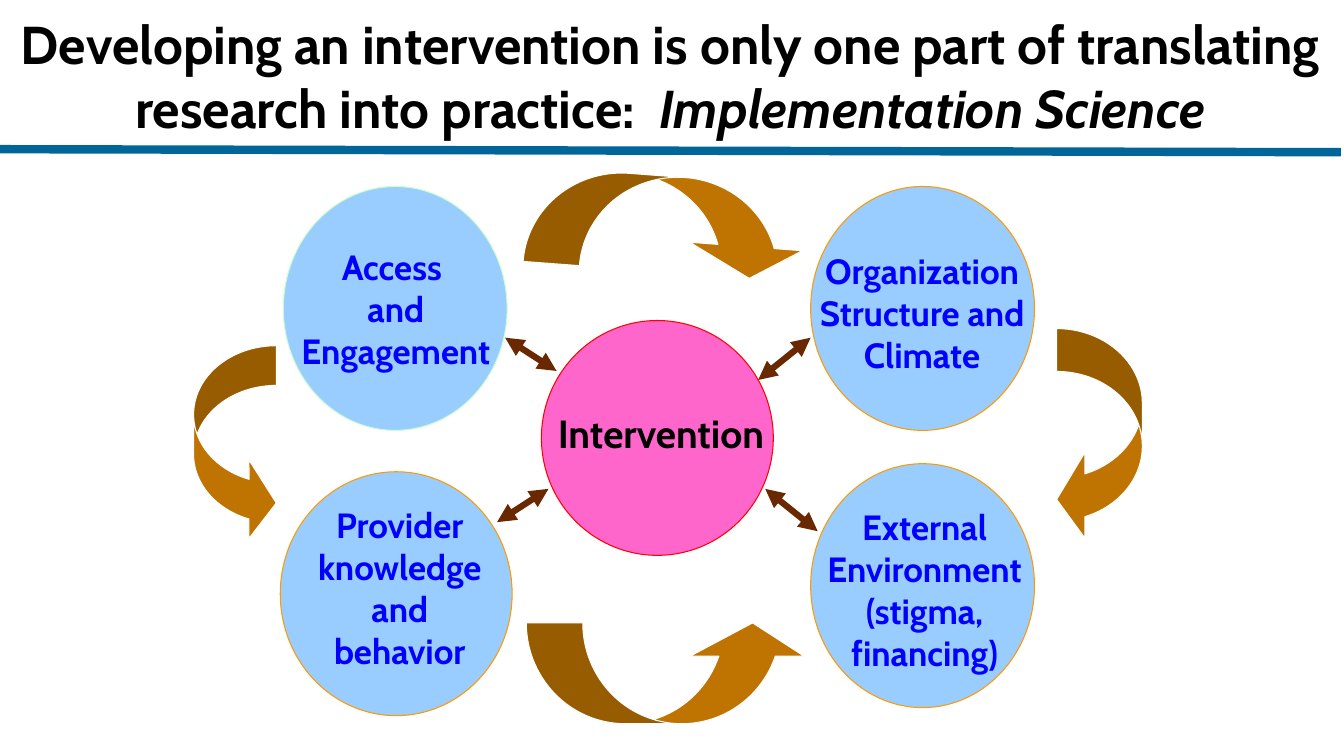
from lxml import etree
from pptx import Presentation
from pptx.dml.color import RGBColor
from pptx.enum.shapes import MSO_CONNECTOR, MSO_SHAPE
from pptx.enum.text import MSO_ANCHOR, PP_ALIGN
from pptx.oxml.ns import qn
from pptx.util import Inches, Pt

OVAL = MSO_SHAPE.OVAL
LEFT = MSO_SHAPE.CURVED_LEFT_ARROW
RIGHT = MSO_SHAPE.CURVED_RIGHT_ARROW
UP = MSO_SHAPE.CURVED_UP_ARROW
TOP, MIDDLE = MSO_ANCHOR.TOP, MSO_ANCHOR.MIDDLE

COLORS = {
    "black": "000000", "white": "FFFFFF", "blue": "0000FF", "sky": "99CCFF",
    "pink": "FF66CC", "red": "FF0000", "mint": "CCFFCC", "orange": "FF9900",
    "gold": "BF7300", "brown": "6A2800", "teal": "006699",
}
FONT = "Cabin"

TITLE = [[
    ("Developing an intervention is only one part of translating "
     "research into practice:  ", False),
    ("Implementation Science", True),
]]
# oval box, fill, edge, text box, text size, text colour, paragraphs
CIRCLES = [
    ((5.37, 3.18, 2.3, 2.33), "pink", "red", (5.29, 4.01, 2.53, 0.57),
     28, "black", ["Intervention"]),
    ((2.81, 1.85, 2.22, 2.42), "sky", "mint", (2.85, 2.39, 2.15, 1.36),
     25, "blue", ["Access ", "and Engagement"]),
    ((2.78, 4.68, 2.3, 2.42), "sky", "orange", (2.93, 4.95, 2.07, 1.78),
     25, "blue", ["Provider knowledge and behavior"]),
    ((8.04, 1.85, 2.22, 2.42), "sky", "orange", (7.88, 2.43, 2.53, 1.36),
     25, "blue", ["Organization Structure and Climate"]),
    ((8.04, 4.6, 2.22, 2.42), "sky", "orange", (8.04, 4.97, 2.26, 1.78),
     25, "blue", ["External Environment (stigma, financing)"]),
]
LINKS = [
    (5.01, 3.35, 5.52, 3.68), (7.59, 4.85, 8.11, 5.27),
    (7.52, 3.77, 8.04, 3.35), (4.93, 5.18, 5.44, 4.85),
]
# preset, box, turn in degrees, adjustments
ARROWS = [
    (LEFT, (10.48, 3.26, 0.85, 2.12), 0, (0.5, 1.0, 0.33)),
    (RIGHT, (1.92, 3.43, 0.82, 1.95), 0, (0.48, 0.95, 0.33)),
    (UP, (5.22, 6.18, 2.81, 1), 0, (0.56, 1.13, 0.33)),
    (LEFT, (6.15, 0.82, 0.95, 2.81), 274.3, (0.59, 1.18, 0.33)),
]
RULE = (-0.03, 1.48, 13.3, 1.51)


def color(name):
    return RGBColor.from_string(COLORS[name])


def add_shape(slide, kind, box, fill, edge):
    shape = slide.shapes.add_shape(kind, *map(Inches, box))
    shape.shadow.inherit = False
    shape.fill.solid()
    shape.fill.fore_color.rgb = color(fill)
    shape.line.color.rgb = color(edge)
    shape.line.width = Pt(0.75)
    return shape


def add_text(slide, box, paras, size, ink, anchor=TOP):
    """Add centred bold text; each paragraph is a list of (text, italic)."""
    frame = slide.shapes.add_textbox(*map(Inches, box)).text_frame
    frame.word_wrap = True
    frame.vertical_anchor = anchor
    for i, runs in enumerate(paras):
        para = frame.add_paragraph() if i else frame.paragraphs[0]
        para.alignment = PP_ALIGN.CENTER
        for text, italic in runs:
            run = para.add_run()
            run.text = text
            style = {"name": FONT, "size": Pt(size), "bold": True, "italic": italic}
            for key, value in style.items():
                setattr(run.font, key, value)
            run.font.color.rgb = color(ink)


def add_line(slide, ends, ink, width, heads=False):
    line = slide.shapes.add_connector(MSO_CONNECTOR.STRAIGHT, *map(Inches, ends))
    line.line.color.rgb = color(ink)
    line.line.width = Pt(width)
    if heads:
        for tag in ("a:headEnd", "a:tailEnd"):
            etree.SubElement(line.line._get_or_add_ln(), qn(tag), type="triangle")
    etree.SubElement(line._element.spPr, qn("a:effectLst"))


def main():
    deck = Presentation()
    deck.slide_width, deck.slide_height = Inches(13.33), Inches(7.5)
    slide = deck.slides.add_slide(deck.slide_layouts[6])

    add_text(slide, (0, 0.12, 13.3, 1.25), TITLE, 38, "black", MIDDLE)
    for oval, fill, edge, box, size, ink, paras in CIRCLES:
        add_shape(slide, OVAL, oval, fill, edge)
        add_text(slide, box, [[(text, False)] for text in paras], size, ink)
    for ends in LINKS:
        add_line(slide, ends, "brown", 4.5, heads=True)
    for kind, box, turn, adjust in ARROWS:
        arrow = add_shape(slide, kind, box, "gold", "white")
        arrow.rotation = turn
        for i, value in enumerate(adjust):
            arrow.adjustments[i] = value
    add_line(slide, RULE, "teal", 6)

    deck.save("out.pptx")


if __name__ == "__main__":
    main()
